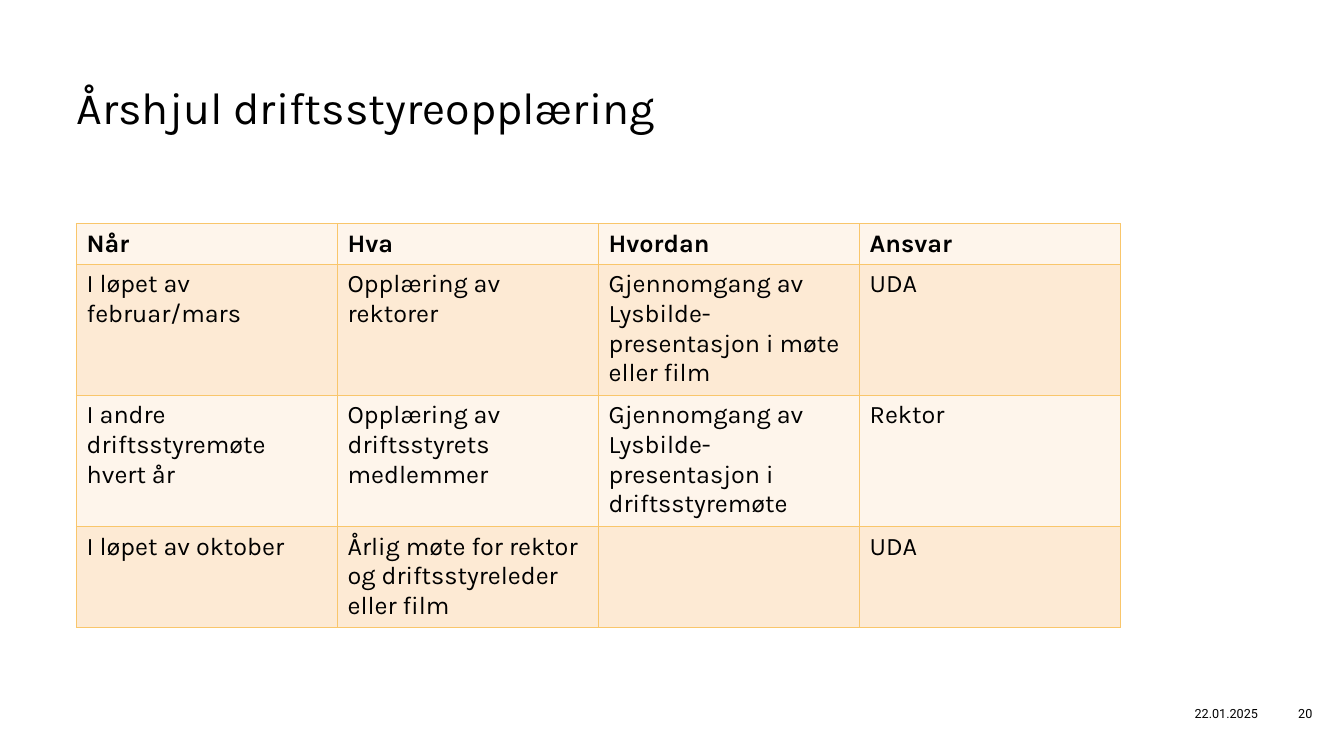
import pptx
import pptx.util
import pptx.dml.color
import pptx.enum.text
import pptx.oxml
import pptx.oxml.ns
from pptx.util import Cm

# Content
TITLE = "Årshjul driftsstyreopplæring"
DATE = "22.01.2025"
PAGE = "20"
ROWS = [
    ("Når", "Hva", "Hvordan", "Ansvar"),
    ("I løpet av februar/mars", "Opplæring av rektorer",
     "Gjennomgang av Lysbilde-presentasjon i møte eller film", "UDA"),
    ("I andre driftsstyremøte hvert år", "Opplæring av driftsstyrets medlemmer",
     "Gjennomgang av Lysbilde-presentasjon i driftsstyremøte", "Rektor"),
    ("I løpet av oktober",
     "Årlig møte for rektor og driftsstyreleder eller film", "", "UDA"),
]

# Layout and colours
LEFT, WIDE = 1.93, 26.31
HIGH = (1.03, 3.24, 3.24, 2.49)
BANDS = ("FEF5EB", "FDEAD4")
EDGE = "F9C66B"
INK = "000000"
ALIGN = pptx.enum.text.PP_ALIGN
ANCHOR = pptx.enum.text.MSO_ANCHOR


def color(code):
    return pptx.dml.color.RGBColor.from_string(code)


def write(frame, text, size=18, face="Karla", bold=False, align=ALIGN.LEFT):
    frame.word_wrap = True
    para = frame.paragraphs[0]
    para.alignment = align
    if text:
        run = para.add_run()
        run.text = text
        font = run.font
    else:
        font = para.font
    font.size = pptx.util.Pt(size)
    font.name = face
    font.bold = bold
    font.color.rgb = color(INK)


def add_box(left, top, wide, high):
    box = slide.shapes.add_textbox(Cm(left), Cm(top), Cm(wide), Cm(high))
    return box.text_frame


def add_edges(cell):
    props = cell._tc.get_or_add_tcPr()
    space = pptx.oxml.ns.nsdecls("a")
    for side in "LRTB":
        props.append(pptx.oxml.parse_xml(
            f'<a:ln{side} {space} w="12700"><a:solidFill>'
            f'<a:srgbClr val="{EDGE}"/></a:solidFill></a:ln{side}>'))


deck = pptx.Presentation()
deck.slide_width, deck.slide_height = Cm(33.87), Cm(19.05)
slide = deck.slides.add_slide(deck.slide_layouts[6])

# Title
head = add_box(LEFT, 2.01, WIDE, 3.63)
head.margin_left = head.margin_right = 0
head.margin_top = head.margin_bottom = 0
write(head, TITLE, size=32)

# Table
table = slide.shapes.add_table(
    len(ROWS), len(ROWS[0]), Cm(LEFT), Cm(5.64), Cm(WIDE), Cm(sum(HIGH))).table
table.first_row = True
table.horz_banding = False
for col in table.columns:
    col.width = Cm(WIDE / len(ROWS[0]))
for r, row in enumerate(ROWS):
    table.rows[r].height = Cm(HIGH[r])
    for c, text in enumerate(row):
        cell = table.cell(r, c)
        add_edges(cell)
        cell.fill.solid()
        cell.fill.fore_color.rgb = color(BANDS[r % 2])
        write(cell.text_frame, text, bold=r == 0)

# Footer
for text, left, wide, align in (
        (DATE, 28.22, 3.73, ALIGN.RIGHT), (PAGE, 31.93, 1.93, ALIGN.CENTER)):
    foot = add_box(left, 17.48, wide, 1.02)
    foot.vertical_anchor = ANCHOR.MIDDLE
    write(foot, text, size=9, face="Roboto", align=align)

deck.save("out.pptx")
